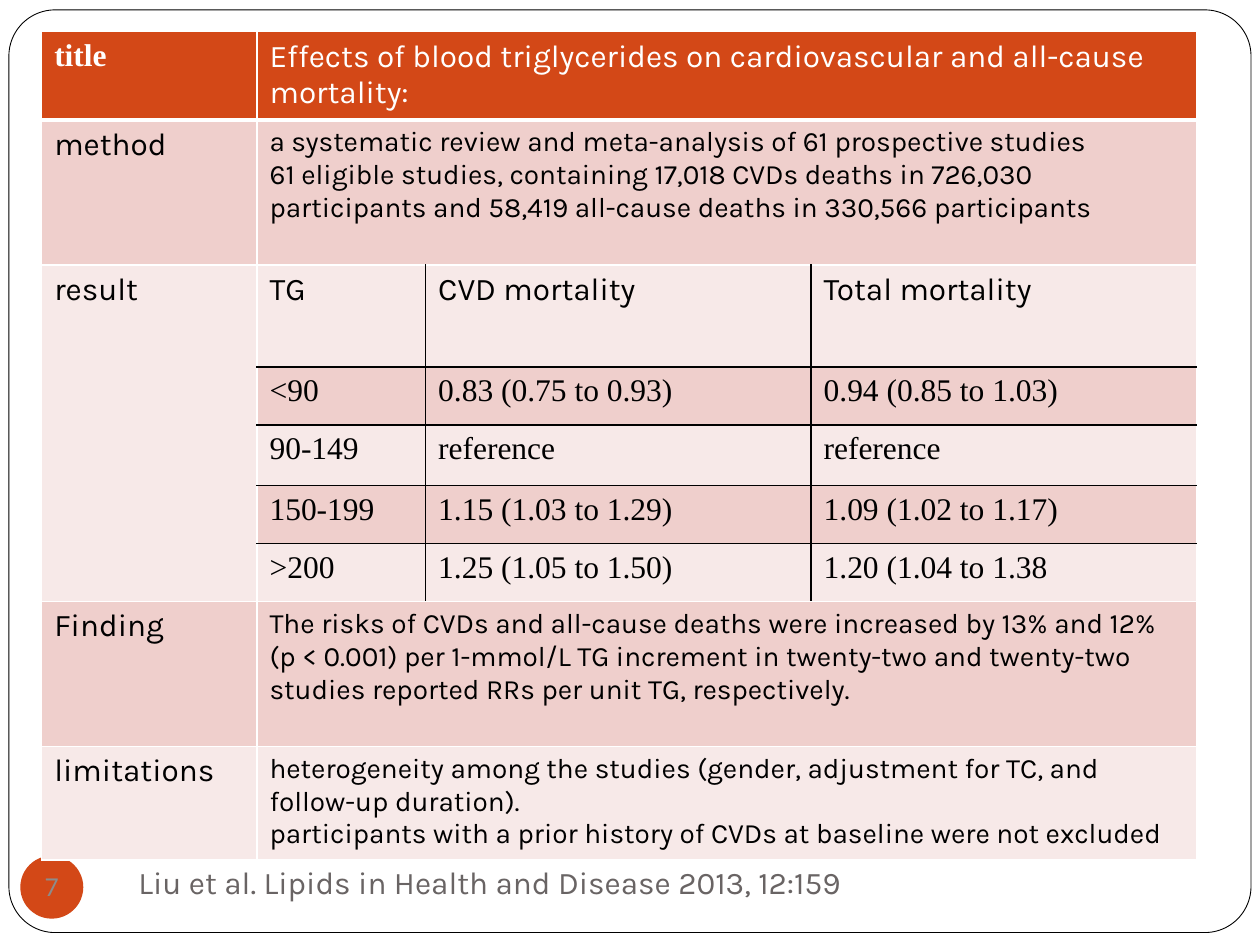
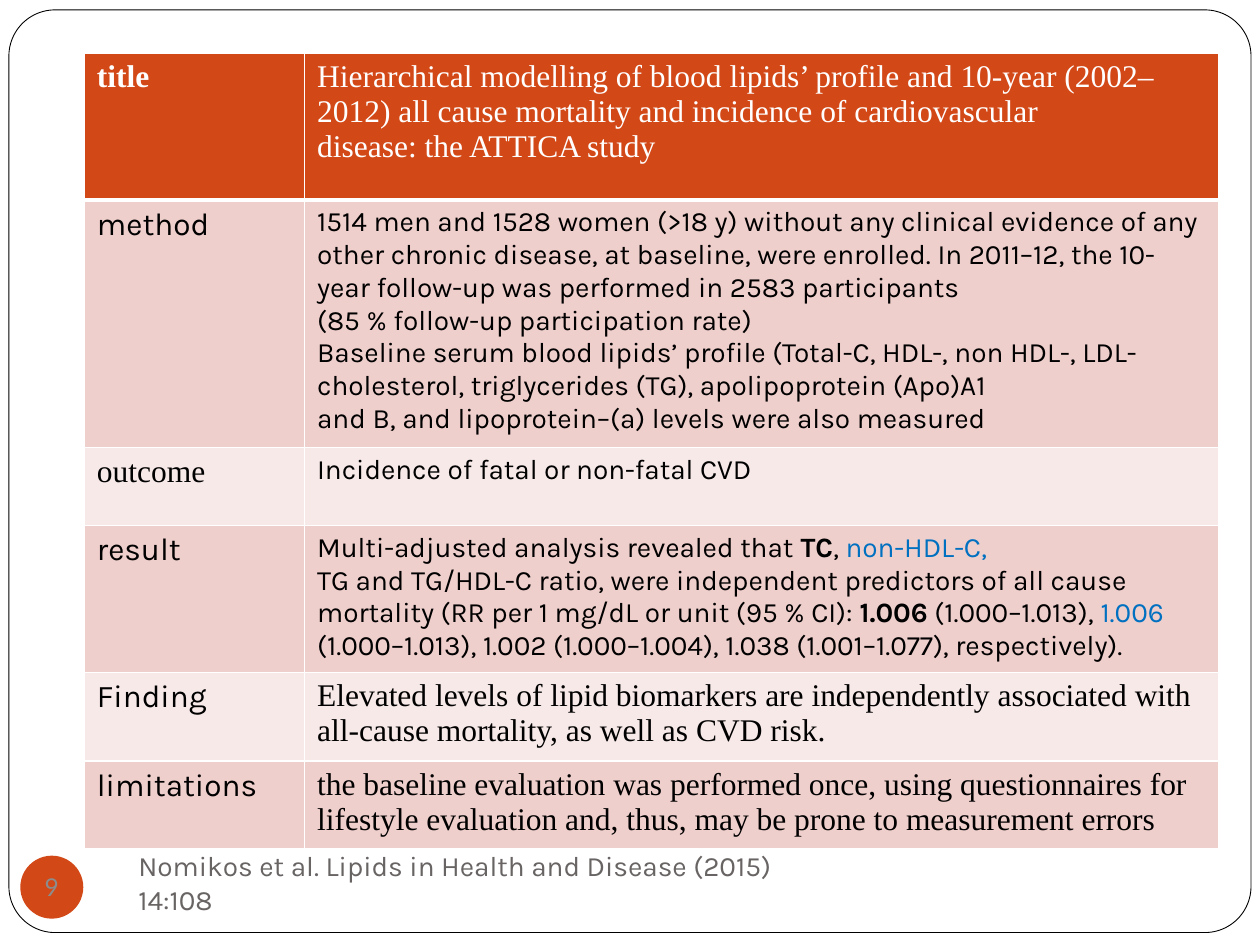
from dataclasses import dataclass

from lxml import etree
from pptx import Presentation
from pptx.dml.color import RGBColor
from pptx.enum.shapes import MSO_SHAPE
from pptx.enum.text import MSO_ANCHOR, PP_ALIGN
from pptx.oxml.ns import qn
from pptx.util import Cm, Pt

ROUND_RECT, OVAL = MSO_SHAPE.ROUNDED_RECTANGLE, MSO_SHAPE.OVAL
MIDDLE, CENTER = MSO_ANCHOR.MIDDLE, PP_ALIGN.CENTER


@dataclass(frozen=True)
class Theme:
    accent: str = "D34817"
    band_dark: str = "EFCFCC"
    band_light: str = "F7E9E8"
    white: str = "FFFFFF"
    black: str = "000000"
    citation: str = "696464"
    number: str = "8C8C8C"
    highlight: str = "0070C0"
    sans: str = "Karla"
    serif: str = "Times New Roman"
    number_font: str = "Lato"
    large: int = 18
    small: int = 16
    number_size: int = 14


THEME = Theme()


@dataclass(frozen=True)
class Span:
    text: str
    bold: bool = False
    color: str | None = None


@dataclass(frozen=True)
class Entry:
    """Content of one cell: each paragraph is a string or a tuple of spans."""
    paragraphs: tuple
    font: str = THEME.sans
    size: int = THEME.large
    bold: bool = False


@dataclass(frozen=True)
class Row:
    height: float
    entries: tuple[Entry | None, ...]


@dataclass(frozen=True)
class Study:
    number: int
    citation: str
    citation_width: float
    citation_size: int
    left: float
    top: float
    columns: tuple[float, ...]
    rows: tuple[Row, ...]
    grid: range = range(0)  # rows holding the inner table of results


def label(text: str) -> Entry:
    return Entry((text,))


def serif(*paragraphs: str, bold: bool = False) -> Entry:
    return Entry(paragraphs, THEME.serif, bold=bold)


def body(*paragraphs: str | tuple[Span, ...]) -> Entry:
    return Entry(paragraphs, size=THEME.small)


def risk_row(height: float, *values: str) -> Row:
    return Row(height, (None, *(serif(v) for v in values)))


TITLE = serif("title", bold=True)

STUDIES = (
    Study(
        7, "Liu et al. Lipids in Health and Disease 2013, 12:159", 15.24, THEME.large,
        0.84, 0.64, (4.34, 3.4, 7.77, 7.77),
        (
            Row(1.7, (TITLE, label(
                "Effects of blood triglycerides on cardiovascular and all-cause mortality:"))),
            Row(2.92, (label("method"), body(
                "a systematic review and meta-analysis of 61 prospective studies",
                "61 eligible studies, containing 17,018 CVDs deaths in 726,030 participants "
                "and 58,419 all-cause deaths in 330,566 participants"))),
            Row(2.06, (label("result"), label("TG"), label("CVD mortality"),
                       label("Total mortality"))),
            risk_row(1.17, "<90", "0.83 (0.75 to 0.93)", "0.94 (0.85 to 1.03)"),
            risk_row(1.22, "90-149", "reference", "reference"),
            risk_row(1.17, "150-199", "1.15 (1.03 to 1.29)", "1.09 (1.02 to 1.17)"),
            risk_row(1.17, ">200", "1.25 (1.05 to 1.50)", "1.20 (1.04 to 1.38"),
            Row(2.92, (label("Finding"), body(
                "The risks of CVDs and all-cause deaths were increased by 13% and 12% "
                "(p < 0.001) per 1-mmol/L TG increment in twenty-two and twenty-two "
                "studies reported RRs per unit TG, respectively."))),
            Row(2.24, (label("limitations"), body(
                "heterogeneity among the studies (gender, adjustment for TC, and "
                "follow-up duration).",
                "participants with a prior history of CVDs at baseline were not excluded"))),
        ),
        range(2, 7),
    ),
    Study(
        9, "Nomikos et al. Lipids in Health and Disease (2015) 14:108", 14.17, THEME.small,
        1.7, 1.07, (4.44, 18.42),
        (
            Row(2.96, (TITLE, serif(
                "Hierarchical modelling of blood lipids’ profile and 10-year (2002–2012) "
                "all cause mortality and incidence of cardiovascular",
                "disease: the ATTICA study"))),
            Row(4.88, (label("method"), body(
                "1514 men and 1528 women (>18 y) without any clinical evidence of any other "
                "chronic disease, at baseline, were enrolled. In 2011–12, the 10-year "
                "follow-up was performed in 2583 participants",
                "(85 % follow-up participation rate)",
                "Baseline serum blood lipids’ profile (Total-C, HDL-, non HDL-, "
                "LDL-cholesterol, triglycerides (TG), apolipoprotein (Apo)A1",
                "and B, and lipoprotein–(a) levels were also measured"))),
            Row(1.57, (serif("outcome"), body("Incidence of fatal or non-fatal CVD"))),
            Row(2.9, (label("result"), body(
                (Span("Multi-adjusted analysis revealed that "), Span("TC", bold=True),
                 Span(", "), Span("non-HDL-C,", color=THEME.highlight)),
                (Span("TG and TG/HDL-C ratio, were independent predictors of all cause "
                      "mortality (RR per 1 mg/dL or unit (95 % CI): "),
                 Span("1.006", bold=True), Span(" (1.000–1.013), "),
                 Span("1.006", color=THEME.highlight),
                 Span(" (1.000–1.013), 1.002 (1.000–1.004), 1.038 (1.001–1.077), "
                      "respectively).")),
            ))),
            Row(1.7, (label("Finding"), serif(
                "Elevated levels of lipid biomarkers are independently associated with "
                "all-cause mortality, as well as CVD risk."))),
            Row(1.7, (label("limitations"), serif(
                "the baseline evaluation was performed once, using questionnaires for "
                "lifestyle evaluation and, thus, may be prone to measurement errors"))),
        ),
    ),
)


def rgb(color: str) -> RGBColor:
    return RGBColor.from_string(color)


def style_font(font, name: str, size: int, color: str, bold: bool = False) -> None:
    font.name, font.size, font.bold = name, Pt(size), bold
    font.color.rgb = rgb(color)


def add_plain_shape(slide, kind, left: float, top: float, width: float, height: float,
                    fill: str, line: str | None = None):
    sp = slide.shapes.add_shape(kind, Cm(left), Cm(top), Cm(width), Cm(height))
    sp.shadow.inherit = False
    sp.fill.solid()
    sp.fill.fore_color.rgb = rgb(fill)
    if line:
        sp.line.color.rgb = rgb(line)
        sp.line.width = Pt(0.5)
    else:
        sp.line.fill.background()
    return sp


def add_frame(slide) -> None:
    sp = add_plain_shape(slide, ROUND_RECT, 0.18, 0.2, 25.04, 18.6, THEME.white, THEME.black)
    sp.adjustments[0] = 0.05


def add_citation(slide, study: Study) -> None:
    box = slide.shapes.add_textbox(Cm(2.54), Cm(17.15), Cm(study.citation_width), Cm(1.27))
    tf = box.text_frame
    tf.word_wrap, tf.vertical_anchor = True, MIDDLE
    p = tf.paragraphs[0]
    p.text = study.citation
    style_font(p.font, THEME.sans, study.citation_size, THEME.citation)


def add_slide_number(slide, number: int) -> None:
    sp = add_plain_shape(slide, OVAL, 0.41, 17.25, 1.27, 1.27, THEME.accent)
    tf = sp.text_frame
    tf.margin_left = tf.margin_right = tf.margin_top = tf.margin_bottom = 0
    tf.word_wrap, tf.vertical_anchor = False, MIDDLE
    p = tf.paragraphs[0]
    p.text, p.alignment = str(number), CENTER
    style_font(p.font, THEME.number_font, THEME.number_size, THEME.number)


def write_entry(cell, entry: Entry, color: str) -> None:
    tf = cell.text_frame
    for i, content in enumerate(entry.paragraphs):
        p = tf.add_paragraph() if i else tf.paragraphs[0]
        style_font(p.font, entry.font, entry.size, color, entry.bold)
        if isinstance(content, str):
            p.text = content
            continue
        for span in content:
            r = p.add_run()
            r.text = span.text
            if span.bold:
                r.font.bold = True
            if span.color:
                r.font.color.rgb = rgb(span.color)


def set_border(cell, side: str, color: str, points: int) -> None:
    tc_pr = cell._tc.get_or_add_tcPr()
    ln = etree.SubElement(tc_pr, qn(f"a:ln{side}"), w=str(Pt(points)))
    fill = etree.SubElement(ln, qn("a:solidFill"))
    etree.SubElement(fill, qn("a:srgbClr"), val=color)


def format_cell(cell, row: int, col: int, study: Study) -> None:
    """Draw white edges, black ones inside the grid, and the fill of the row's band."""
    grid = study.grid
    in_grid = row in grid and col > 0
    inner = {
        "L": in_grid and col > 1,
        "R": in_grid and col < len(study.columns) - 1,
        "T": in_grid and row - 1 in grid,
        "B": in_grid and row + 1 in grid,
    }
    for side, black in inner.items():
        under_header = (row, side) in ((0, "B"), (1, "T"))
        set_border(cell, side, THEME.black if black else THEME.white, 3 if under_header else 1)
    if row == 0:
        fill = THEME.accent
    else:
        dark = row % 2 and not (row in grid and col == 0)
        fill = THEME.band_dark if dark else THEME.band_light
    cell.fill.solid()
    cell.fill.fore_color.rgb = rgb(fill)


def add_study_table(slide, study: Study) -> None:
    n_rows, n_cols = len(study.rows), len(study.columns)
    heights = [row.height for row in study.rows]
    table = slide.shapes.add_table(n_rows, n_cols, Cm(study.left), Cm(study.top),
                                   Cm(sum(study.columns)), Cm(sum(heights))).table
    table.first_row = table.horz_banding = False
    for column, width in zip(table.columns, study.columns):
        column.width = Cm(width)
    for i, row in enumerate(study.rows):
        table.rows[i].height = Cm(row.height)
        for j in range(n_cols):
            format_cell(table.cell(i, j), i, j, study)
        for j, entry in enumerate(row.entries):
            if entry:
                write_entry(table.cell(i, j), entry, THEME.black if i else THEME.white)
        if len(row.entries) < n_cols:
            table.cell(i, 1).merge(table.cell(i, n_cols - 1))
    if study.grid:
        table.cell(study.grid[0], 0).merge(table.cell(study.grid[-1], 0))


def main() -> None:
    prs = Presentation()
    prs.slide_width, prs.slide_height = Cm(25.4), Cm(19.05)
    for study in STUDIES:
        slide = prs.slides.add_slide(prs.slide_layouts[6])
        add_frame(slide)
        add_citation(slide, study)
        add_slide_number(slide, study.number)
        add_study_table(slide, study)
    prs.save("out.pptx")


if __name__ == "__main__":
    main()
